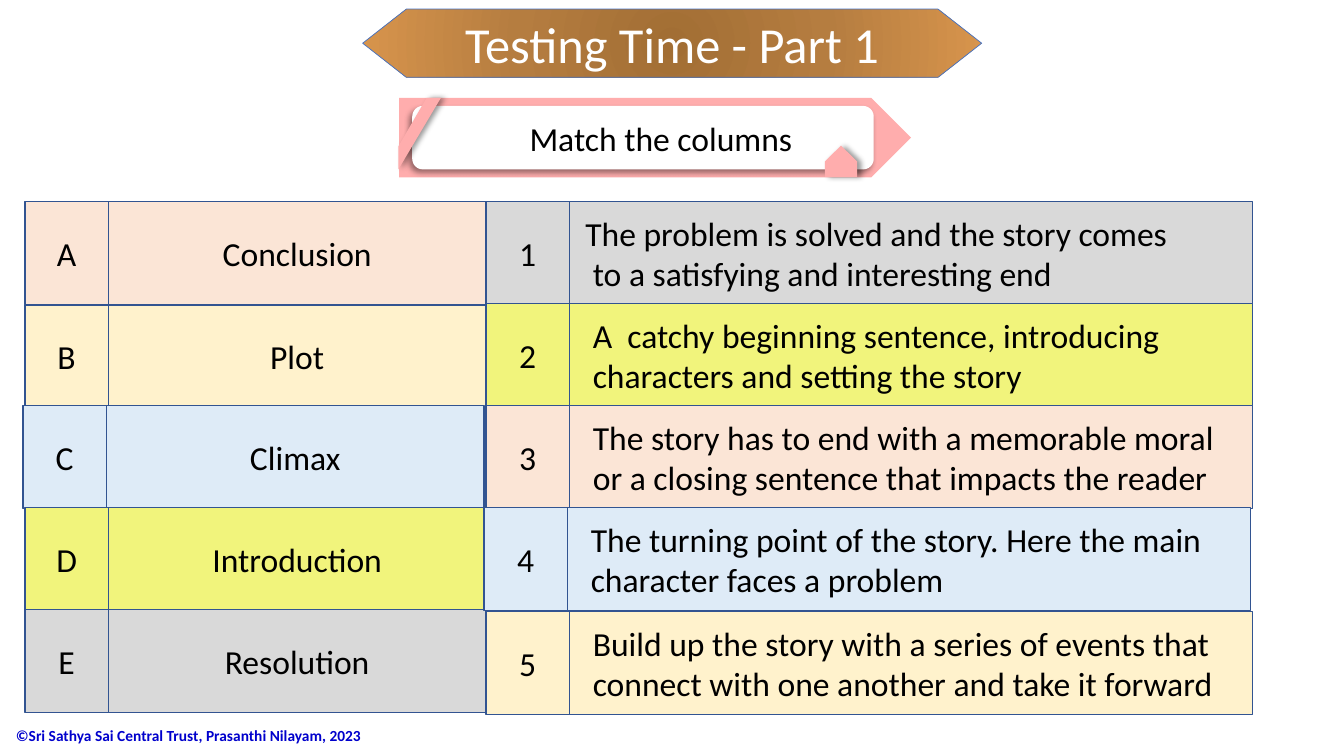
from dataclasses import dataclass

from lxml import etree
from pptx import Presentation
from pptx.dml.color import RGBColor
from pptx.enum.shapes import MSO_SHAPE
from pptx.enum.text import MSO_ANCHOR, PP_ALIGN
from pptx.oxml.ns import qn
from pptx.util import Cm, Pt

RECT = MSO_SHAPE.RECTANGLE
ROUND = MSO_SHAPE.ROUNDED_RECTANGLE
ARROW = MSO_SHAPE.PENTAGON
MIDDLE = MSO_ANCHOR.MIDDLE
LEFT, CENTER = PP_ALIGN.LEFT, PP_ALIGN.CENTER


@dataclass(frozen=True)
class Theme:
    font: str = "Calibri"
    title: int = 36
    body: int = 24
    note: int = 11
    black: str = "000000"
    white: str = "FFFFFF"
    blue: str = "0000CC"
    edge: str = "4472C4"
    grid: str = "325491"
    pink: str = "FFADAD"
    peach: str = "FBE5D6"
    cream: str = "FFF2CC"
    sky: str = "DEEBF7"
    lime: str = "F1F47C"
    gray: str = "D9D9D9"
    bronze: tuple = ((0, "A26E34"), (50, "B57D40"), (100, "D7944C"))


T = Theme()

# Letter, term, fill, shift right, shift down
TERMS = [
    ("A", "Conclusion", T.peach, 0, 0),
    ("B", "Plot", T.cream, 0, 0.04),
    ("C", "Climax", T.sky, -0.05, 0),
    ("D", "Introduction", T.lime, 0, 0),
    ("E", "Resolution", T.gray, 0, 0),
]
# Number, meaning, fill, shift right, shift down
MEANINGS = [
    ("1", "The problem is solved and the story comes\n"
          "to a satisfying and interesting end", T.gray, 0, 0),
    ("2", "A  catchy beginning sentence, introducing\n"
          "characters and setting the story", T.lime, 0, 0),
    ("3", "The story has to end with a memorable moral\n"
          "or a closing sentence that impacts the reader", T.peach, 0, 0),
    ("4", "The turning point of the story. Here the main\n"
          "character faces a problem", T.sky, -0.05, 0),
    ("5", "Build up the story with a series of events that\n"
          "connect with one another and take it forward", T.cream, 0, 0.05),
]


def paint(shape, fill=None, line=None, width=1):
    """Set fill and outline, and drop the shadow."""
    shape.shadow.inherit = False
    if fill:
        shape.fill.solid()
        shape.fill.fore_color.rgb = RGBColor.from_string(fill)
    if line:
        shape.line.color.rgb = RGBColor.from_string(line)
        shape.line.width = Pt(width)
    else:
        shape.line.fill.background()


def add(slide, kind, box, fill, line=None):
    shape = slide.shapes.add_shape(kind, *map(Cm, box))
    paint(shape, fill, line)
    return shape


def outline(slide, points):
    """Draw a closed outline through points in centimetres."""
    spots = [(Cm(x), Cm(y)) for x, y in points]
    pen = slide.shapes.build_freeform(*spots[0])
    pen.add_line_segments(spots[1:], close=True)
    return pen.convert_to_shape()


def write(shape, text, size, color, align=CENTER, bold=False):
    frame = shape.text_frame
    frame.word_wrap = True
    frame.vertical_anchor = MIDDLE
    frame.text = text
    for para in frame.paragraphs:
        para.alignment = align
        for run in para.runs:
            run.font.name, run.font.size = T.font, Pt(size)
            run.font.bold = bold
            run.font.color.rgb = RGBColor.from_string(color)


def shade(shape, angle):
    """Add a soft outer shadow."""
    effects = shape.element.spPr.find(qn("a:effectLst"))
    cast = etree.SubElement(
        effects, qn("a:outerShdw"), blurRad=str(Pt(4)), dist=str(Pt(3)),
        dir=str(angle * 60000), algn="ctr", rotWithShape="0")
    tint = etree.SubElement(cast, qn("a:srgbClr"), val=T.black)
    etree.SubElement(tint, qn("a:alpha"), val="40000")


def glow(shape, stops):
    """Fill with a gradient that spreads from the centre."""
    shape.fill.background()
    props = shape.element.spPr
    grad = etree.Element(qn("a:gradFill"), rotWithShape="1")
    props.replace(props.find(qn("a:noFill")), grad)
    steps = etree.SubElement(grad, qn("a:gsLst"))
    for at, color in stops:
        stop = etree.SubElement(steps, qn("a:gs"), pos=str(at * 1000))
        etree.SubElement(stop, qn("a:srgbClr"), val=color)
    way = etree.SubElement(grad, qn("a:path"), path="circle")
    etree.SubElement(way, qn("a:fillToRect"),
                     l="50000", t="50000", r="50000", b="50000")


def banner(slide, x, y, w, h):
    tip = 1.1
    shape = outline(slide, [
        (x + tip, y), (x + w - tip, y), (x + w, y + h / 2),
        (x + w - tip, y + h), (x + tip, y + h), (x, y + h / 2)])
    paint(shape, line=T.edge, width=0.5)
    glow(shape, T.bronze)
    write(shape, "Testing Time - Part 1", T.title, T.white)


def prompt(slide, x, y, w, h):
    # Arrow and white panel
    add(slide, ARROW, (x, y, w, h), T.pink)
    panel = add(slide, ROUND, (x + 0.33, y + 0.2, w - 1.27, h - 0.4), T.white)
    shade(panel, 135)
    # Slanted ribbon and small tab
    ribbon = outline(slide, [(x + 0.69, y), (x + 1.05, y),
                             (x - 0.02, y + 1.8), (x - 0.02, y + 1.22)])
    paint(ribbon, T.pink)
    shade(ribbon, 0)
    tab = add(slide, ARROW, (x + 10.74, y + 1.19, 0.79, 0.81), T.pink)
    tab.rotation = 270
    shade(tab, 0)
    # Instruction
    label = slide.shapes.add_textbox(
        Cm(x + 1.17), Cm(y + 0.38), Cm(10.85), Cm(1.27))
    write(label, "Match the columns", T.body, T.black)


def column(slide, x, y, widths, pitch, rows, align):
    """Stack rows of a key cell and a text cell."""
    for i, (key, text, fill, right, down) in enumerate(rows):
        left, top = x + right, y + i * pitch + down
        for words, width, side in zip((key, text), widths, (CENTER, align)):
            cell = add(slide, RECT, (left, top, width, 2.59), fill, T.grid)
            write(cell, words, T.body, T.black, side)
            if side == LEFT:
                cell.text_frame.margin_left = Cm(0.4)
                # The very first line starts slightly further left
                for n, para in enumerate(cell.text_frame.paragraphs):
                    if i or n:
                        para._p.get_or_add_pPr().set("marL", str(Cm(0.19)))
            left += width


def footer(slide, x, y, w, h):
    note = slide.shapes.add_textbox(Cm(x), Cm(y), Cm(w), Cm(h))
    write(note, "©Sri Sathya Sai Central Trust, Prasanthi Nilayam, 2023",
          T.note, T.blue, LEFT, bold=True)


def main():
    deck = Presentation()
    deck.slide_width, deck.slide_height = Cm(33.87), Cm(19.05)
    slide = deck.slides.add_slide(deck.slide_layouts[6])
    footer(slide, 0.15, 18.01, 9.68, 1.04)
    prompt(slide, 10.06, 2.47, 12.9, 2)
    banner(slide, 9.14, 0.23, 15.6, 1.72)
    column(slide, 0.63, 5.08, (2.1, 9.52), 2.57, TERMS, CENTER)
    column(slide, 12.25, 5.08, (2.1, 17.22), 2.57, MEANINGS, LEFT)
    deck.save("out.pptx")


if __name__ == "__main__":
    main()
